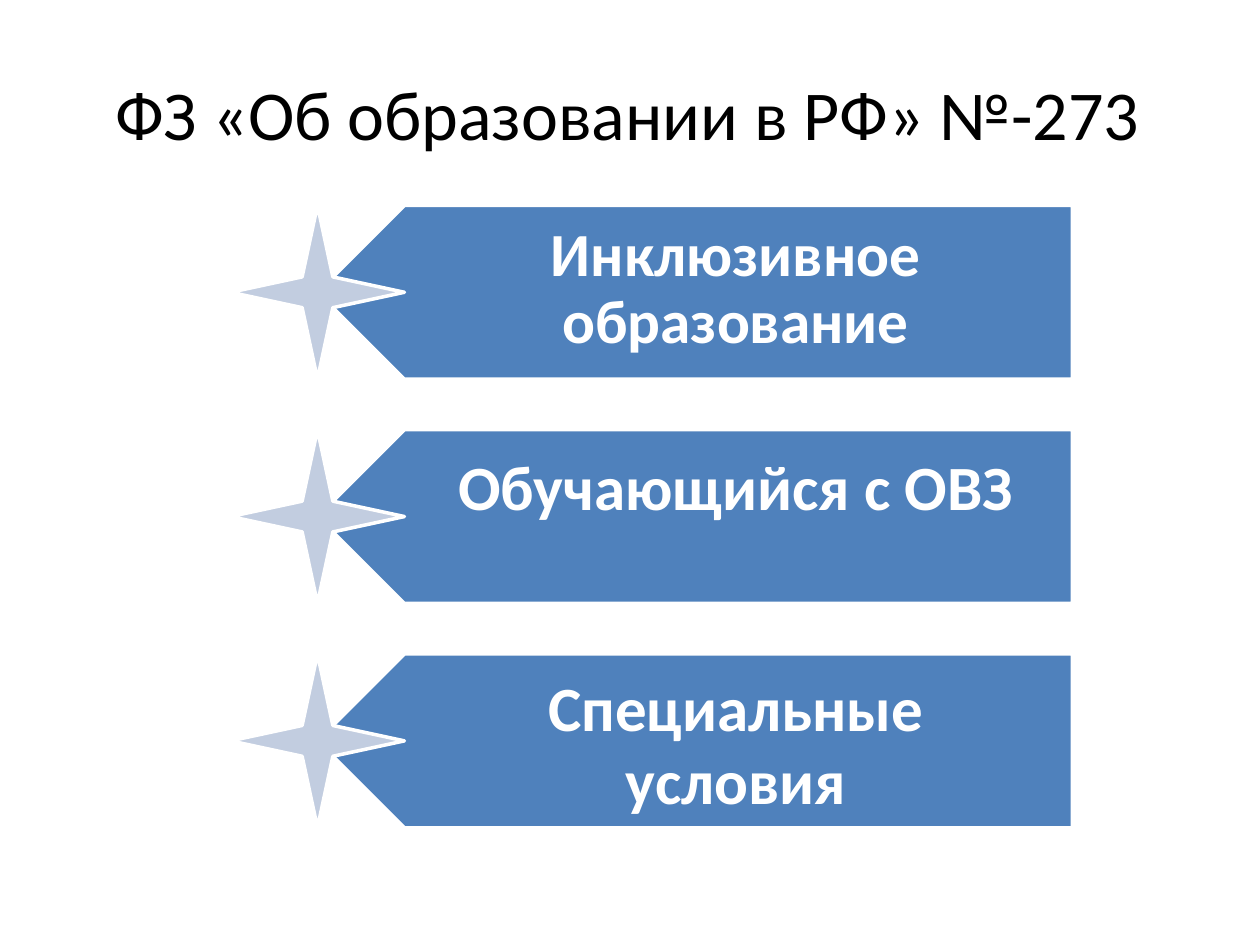
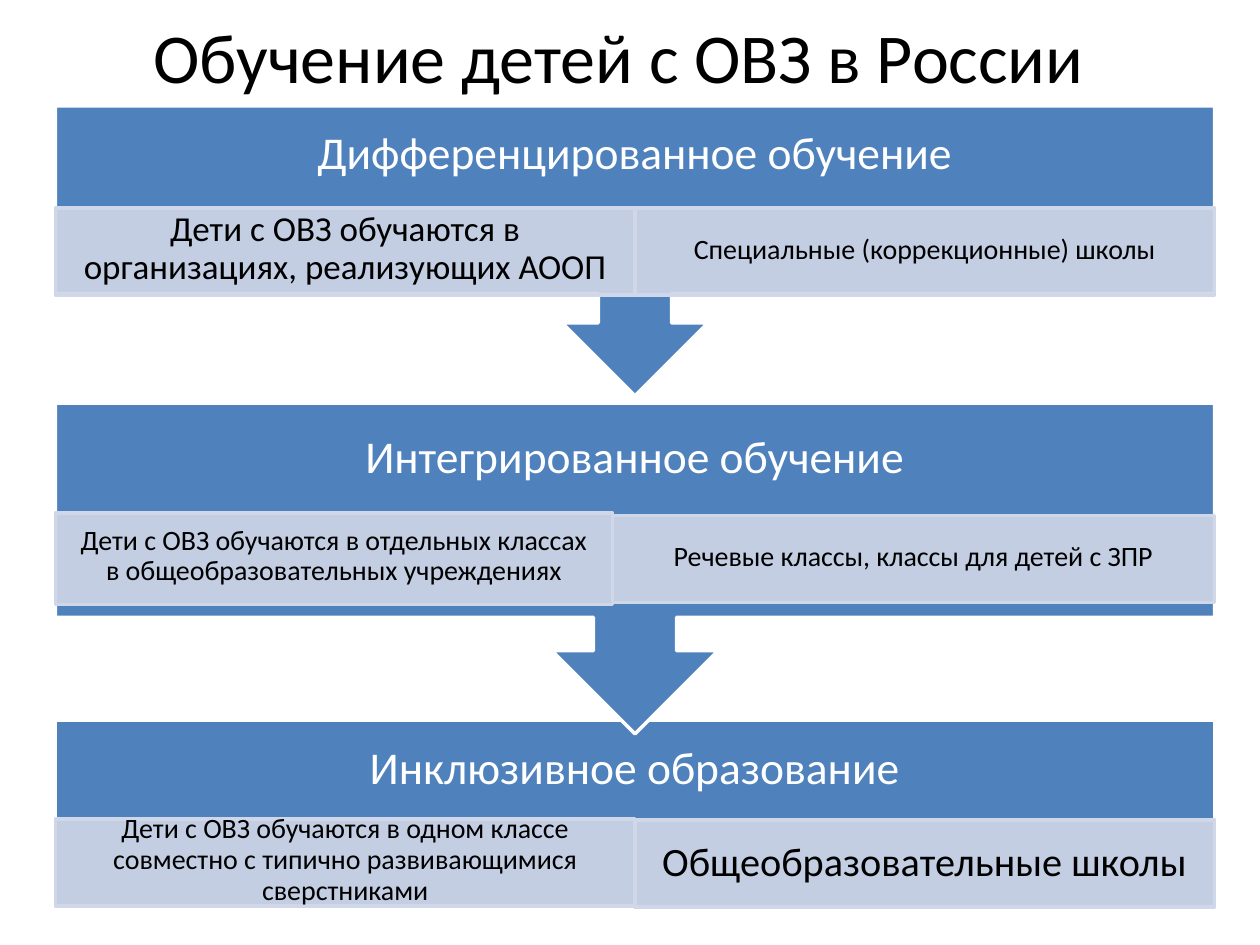
from lxml import etree
from pptx import Presentation
from pptx.dml.color import RGBColor
from pptx.enum.shapes import MSO_SHAPE
from pptx.enum.text import MSO_ANCHOR, PP_ALIGN
from pptx.oxml.ns import qn
from pptx.util import Inches, Pt

CENTER, MIDDLE = PP_ALIGN.CENTER, MSO_ANCHOR.MIDDLE
STAR, RECTANGLE = MSO_SHAPE.STAR_4_POINT, MSO_SHAPE.RECTANGLE

FONT = "Calibri"
COLORS = {"blue": "4F81BC", "star": "C2CDE0", "cell": "D0D7E8",
          "white": "FFFFFF", "black": "000000"}

# Slide 1: the three notions of the law (text, size, line pitch, text centre y)
LAW_TITLE = "ФЗ «Об образовании в РФ» №-273"
NOTIONS = [
    ("Инклюзивное\vобразование", 35, 1.1, 2.29),
    ("Обучающийся с ОВЗ", 36, 1.1, 3.85),
    ("Специальные\nусловия", 36, 1.15, 5.91),
]

# Slide 2: stages of schooling, each with two cells (text, size, top, height)
STAGES_TITLE = "Обучение детей с ОВЗ в России"
STAGES = [
    {"name": "Дифференцированное обучение", "top": 0.84, "bottom": 2.33,
     "arrow": 0.58, "name_y": 1.2, "split": 5.04, "cells": [
         ("Дети с ОВЗ обучаются в\vорганизациях, реализующих АООП", 20, 1.65, 0.69),
         ("Специальные (коррекционные) школы", 16, 1.65, 0.69)]},
    {"name": "Интегрированное обучение", "top": 3.2, "bottom": 4.9,
     "arrow": 0.66, "name_y": 3.61, "split": 4.86, "cells": [
         ("Дети с ОВЗ обучаются в отдельных классах\v"
          "в общеобразовательных учреждениях", 16, 4.07, 0.73),
         ("Речевые классы, классы для детей с ЗПР", 16, 4.09, 0.69)]},
    {"name": "Инклюзивное образование", "top": 5.72, "bottom": 7.21,
     "arrow": 0, "name_y": 6.08, "split": 5.04, "cells": [
         ("Дети с ОВЗ обучаются в одном классе\v"
          "совместно с типично развивающимися\vсверстниками", 16, 6.5, 0.69),
         ("Общеобразовательные школы", 23, 6.51, 0.69)]},
]

# Layout
BANNER_LEFT, BANNER_RIGHT, BANNER_TOP, BANNER_PITCH = 2.52, 8.51, 1.63, 1.78
BANNER_HEIGHT = 1.38
BANNER_TEXT_X = 5.84
BAND_LEFT, BAND_RIGHT = 0.44, 9.64
BAND_MIDDLE = (BAND_LEFT + BAND_RIGHT) / 2


def rgb(name):
    return RGBColor.from_string(COLORS[name])


def paint(shape, fill, line="white"):
    shape.shadow.inherit = False
    shape.fill.solid()
    shape.fill.fore_color.rgb = rgb(fill)
    shape.line.color.rgb = rgb(line)
    shape.line.width = Pt(2)


def write(shape, text, size, color, bold=False, pitch=1.1):
    frame = shape.text_frame
    frame.word_wrap = True
    frame.vertical_anchor = MIDDLE
    frame.margin_left = frame.margin_right = 0
    frame.margin_top = frame.margin_bottom = 0
    frame.text = text
    for paragraph in frame.paragraphs:
        paragraph.alignment = CENTER
        paragraph.font.name = FONT
        paragraph.font.size = Pt(size)
        paragraph.font.bold = bold
        paragraph.font.color.rgb = rgb(color)
        if "\v" in text or "\n" in text:
            paragraph.line_spacing = Pt(round(size * pitch, 1))


def add_label(slide, text, x, y, width, height, size, color, **style):
    """Text box centred on (x, y)."""
    box = slide.shapes.add_textbox(Inches(x - width / 2), Inches(y - height / 2),
                                   Inches(width), Inches(height))
    write(box, text, size, color, **style)


def add_title(slide, text, x, y):
    add_label(slide, text, x, y, 9, 0.7, 40, "black")


def add_outline(slide, points):
    corners = [(Inches(x), Inches(y)) for x, y in points]
    builder = slide.shapes.build_freeform(*corners[0])
    builder.add_line_segments(corners[1:], close=True)
    paint(builder.convert_to_shape(), "blue")


def add_notion(slide, index, text, size, pitch, text_y):
    top = BANNER_TOP + index * BANNER_PITCH
    half = BANNER_HEIGHT / 2
    bottom, shoulder = top + BANNER_HEIGHT, BANNER_LEFT + half
    add_outline(slide, [(BANNER_RIGHT, top), (shoulder, top), (BANNER_LEFT, top + half),
                        (shoulder, bottom), (BANNER_RIGHT, bottom)])
    star = slide.shapes.add_shape(STAR, Inches(BANNER_LEFT - half), Inches(top),
                                  Inches(BANNER_HEIGHT), Inches(BANNER_HEIGHT))
    paint(star, "star")
    add_label(slide, text, BANNER_TEXT_X, text_y, 4.6, 1.2, size, "white",
              bold=True, pitch=pitch)


def add_band(slide, top, bottom, arrow):
    """Wide band; an arrow of the given half-width points down from it."""
    points = [(BAND_LEFT, bottom), (BAND_LEFT, top), (BAND_RIGHT, top), (BAND_RIGHT, bottom)]
    if arrow:
        neck = bottom + 0.4 * arrow
        right_side = [(arrow / 2, bottom), (arrow / 2, neck), (arrow, neck)]
        points += [(BAND_MIDDLE + dx, y) for dx, y in right_side]
        points.append((BAND_MIDDLE, neck + arrow))
        points += [(BAND_MIDDLE - dx, y) for dx, y in reversed(right_side)]
    add_outline(slide, points)


def add_cell(slide, left, right, text, size, top, height):
    cell = slide.shapes.add_shape(RECTANGLE, Inches(left), Inches(top),
                                  Inches(right - left), Inches(height))
    paint(cell, "cell", "cell")
    color = cell.fill._xPr.find(qn("a:solidFill"))[0]
    etree.SubElement(color, qn("a:alpha"), val="90000")
    write(cell, text, size, "black")
    cell.text_frame.margin_bottom = Inches(0.05)


def add_stage(slide, stage):
    add_band(slide, stage["top"], stage["bottom"], stage["arrow"])
    add_label(slide, stage["name"], BAND_MIDDLE, stage["name_y"], 6, 0.47, 26, "white")
    edges = [BAND_LEFT, stage["split"], BAND_RIGHT]
    for left, right, cell in zip(edges, edges[1:], stage["cells"]):
        add_cell(slide, left, right, *cell)


def main():
    deck = Presentation()
    deck.slide_width, deck.slide_height = Inches(10), Inches(7.5)
    blank = deck.slide_layouts[6]

    # Slide 1: notions of the law
    law = deck.slides.add_slide(blank)
    add_title(law, LAW_TITLE, 4.98, 0.89)
    for index, notion in enumerate(NOTIONS):
        add_notion(law, index, *notion)

    # Slide 2: stages, lowest first so that the arrows lie on top
    schooling = deck.slides.add_slide(blank)
    add_title(schooling, STAGES_TITLE, 4.91, 0.44)
    for stage in reversed(STAGES):
        add_stage(schooling, stage)

    deck.save("out.pptx")


if __name__ == "__main__":
    main()
